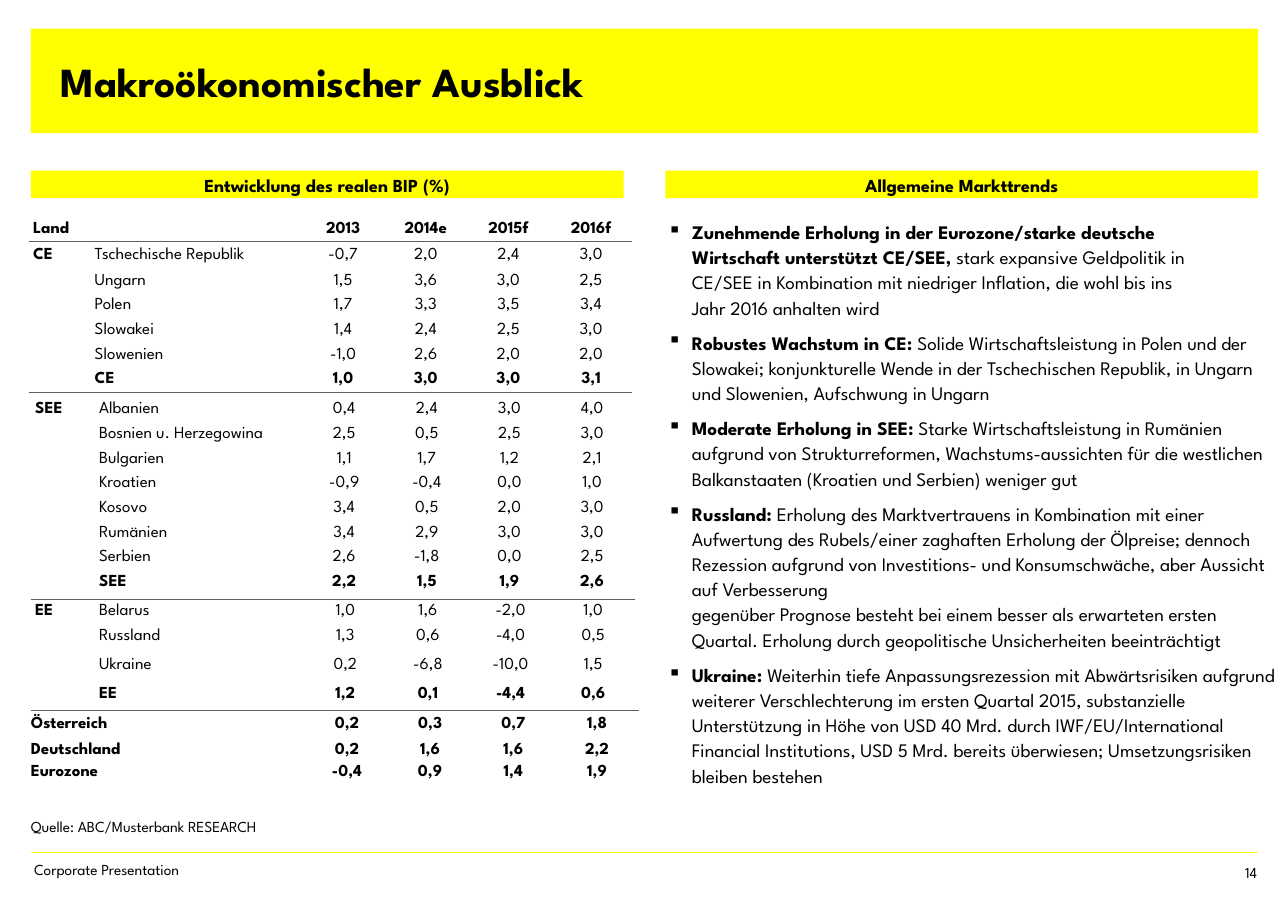
import lxml.etree
import pptx
import pptx.dml.color
import pptx.enum.shapes
import pptx.enum.text
import pptx.oxml.ns
import pptx.util

Inches, Pt = pptx.util.Inches, pptx.util.Pt
ALIGN, ANCHOR = pptx.enum.text.PP_ALIGN, pptx.enum.text.MSO_ANCHOR
qn = pptx.oxml.ns.qn

COLORS = {"yellow": "FFFF00", "black": "000000", "rule": "5F5F5F"}
FONT = "League Spartan"
PLAIN_TABLE_STYLE = "{2D5ABB26-0587-4C30-8999-92F81FD0307C}"
LEFT, CONTENT_WIDTH = 0.28, 11.14
VALUE_WIDTHS = [0.75] * 4

CE_ROWS = [
    ["Land", "", "", "2013", "2014e", "2015f", "2016f"],
    ["CE", "Tschechische Republik", "", "-0,7", "2,0", "2,4", "3,0"],
    ["", "Ungarn", "", "1,5", "3,6", "3,0", "2,5"],
    ["", "Polen", "", "1,7", "3,3", "3,5", "3,4"],
    ["", "Slowakei", "", "1,4", "2,4", "2,5", "3,0"],
    ["", "Slowenien", "", "-1,0", "2,6", "2,0", "2,0"],
    ["", "CE", "", "1,0", "3,0", "3,0", "3,1"],
]
SEE_ROWS = [
    ["SEE", "Albanien", "", "0,4", "2,4", "3,0", "4,0"],
    ["", "Bosnien u. Herzegowina", "", "2,5", "0,5", "2,5", "3,0"],
    ["", "Bulgarien", "", "1,1", "1,7", "1,2", "2,1"],
    ["", "Kroatien", "", "-0,9", "-0,4", "0,0", "1,0"],
    ["", "Kosovo", "", "3,4", "0,5", "2,0", "3,0"],
    ["", "Rumänien", "", "3,4", "2,9", "3,0", "3,0"],
    ["", "Serbien", "", "2,6", "-1,8", "0,0", "2,5"],
    ["", "SEE", "", "2,2", "1,5", "1,9", "2,6"],
]
EE_ROWS = [
    ["EE", "Belarus", "", "1,0", "1,6", "-2,0", "1,0"],
    ["", "Russland", "", "1,3", "0,6", "-4,0", "0,5"],
    ["", "Ukraine", "", "0,2", "-6,8", "-10,0", "1,5"],
    ["", "EE", "", "1,2", "0,1", "-4,4", "0,6"],
]
EURO_ROWS = [
    ["Österreich", "", "0,2", "0,3", "0,7", "1,8"],
    ["Deutschland", "", "0,2", "1,6", "1,6", "2,2"],
    ["Eurozone", "", "-0,4", "0,9", "1,4", "1,9"],
]
TRENDS = [
    ("Zunehmende Erholung in der Eurozone/starke deutsche\nWirtschaft unterstützt CE/SEE, ",
     "stark expansive Geldpolitik in\nCE/SEE in Kombination mit niedriger Inflation, "
     "die wohl bis ins\nJahr 2016 anhalten wird"),
    ("Robustes Wachstum in CE: ",
     "Solide Wirtschaftsleistung in Polen und der Slowakei; konjunkturelle Wende in der "
     "Tschechischen Republik, in Ungarn und Slowenien, Aufschwung in Ungarn"),
    ("Moderate Erholung in SEE:",
     " Starke Wirtschaftsleistung in Rumänien aufgrund von Strukturreformen, "
     "Wachstums-aussichten für die westlichen Balkanstaaten (Kroatien und Serbien) weniger gut"),
    ("Russland: ",
     "Erholung des Marktvertrauens in Kombination mit einer Aufwertung des Rubels/einer "
     "zaghaften Erholung der Ölpreise; dennoch Rezession aufgrund von Investitions- und "
     "Konsumschwäche, aber Aussicht auf Verbesserung\ngegenüber Prognose besteht bei einem "
     "besser als erwarteten ersten Quartal. Erholung durch geopolitische Unsicherheiten "
     "beeinträchtigt"),
    ("Ukraine: ",
     "Weiterhin tiefe Anpassungsrezession mit Abwärtsrisiken aufgrund weiterer "
     "Verschlechterung im ersten Quartal 2015, substanzielle Unterstützung in Höhe von "
     "USD 40 Mrd. durch IWF/EU/International Financial Institutions, USD 5 Mrd. bereits "
     "überwiesen; Umsetzungsrisiken bleiben bestehen"),
]


def rgb(name):
    return pptx.dml.color.RGBColor.from_string(COLORS[name])


def write(paragraph, text, size=10, bold=False, align=None):
    """Append text to the paragraph; a newline becomes a line break."""
    if align is not None:
        paragraph.alignment = align
    for index, line in enumerate(text.split("\n")):
        if index:
            paragraph.add_line_break()
            line_break = paragraph._p.findall(qn("a:br"))[-1]
            lxml.etree.SubElement(line_break, qn("a:rPr"), sz=str(int(size * 100)))
        run = paragraph.add_run()
        run.text = line
        run.font.name, run.font.size, run.font.bold = FONT, Pt(size), bold
        run.font.color.rgb = rgb("black")


def set_margins(target, left=0, top=0, right=0, bottom=0):
    target.margin_left, target.margin_top = Inches(left), Inches(top)
    target.margin_right, target.margin_bottom = Inches(right), Inches(bottom)


def add_text_box(slide, left, top, width, height, margins=(), anchor=ANCHOR.TOP):
    box = slide.shapes.add_textbox(Inches(left), Inches(top), Inches(width), Inches(height))
    frame = box.text_frame
    frame.word_wrap, frame.vertical_anchor = True, anchor
    set_margins(frame, *margins)
    return frame


def add_bar(slide, left, top, width, height):
    bar = slide.shapes.add_shape(pptx.enum.shapes.MSO_SHAPE.RECTANGLE, Inches(left),
                                 Inches(top), Inches(width), Inches(height))
    bar.shadow.inherit = False
    bar.fill.solid()
    bar.fill.fore_color.rgb = rgb("yellow")
    bar.line.fill.background()
    return bar


def add_heading(slide, left, text):
    frame = add_bar(slide, left, 1.55, 5.38, 0.25).text_frame
    set_margins(frame)
    frame.vertical_anchor = ANCHOR.MIDDLE
    frame.paragraphs[0].line_spacing = Pt(15)
    write(frame.paragraphs[0], text, size=12, bold=True, align=ALIGN.CENTER)


def add_footer_line(slide):
    line = slide.shapes.add_connector(
        pptx.enum.shapes.MSO_CONNECTOR.STRAIGHT, Inches(LEFT), Inches(7.74),
        Inches(LEFT + CONTENT_WIDTH), Inches(7.74))
    line.line.color.rgb, line.line.width = rgb("yellow"), Pt(1)
    lxml.etree.SubElement(line._element.spPr, qn("a:effectLst"))


def add_cell_rule(cell, side, points):
    rule = lxml.etree.Element(qn("a:ln" + side), w=str(Pt(points)))
    fill = lxml.etree.SubElement(rule, qn("a:solidFill"))
    lxml.etree.SubElement(fill, qn("a:srgbClr"), val=COLORS["rule"])
    cell._tc.get_or_add_tcPr().insert(0, rule)


def add_gdp_table(slide, left, top, height, rows, widths, weights, bold_rows, rules, merges=()):
    """rules maps a row to the side (T or B) and width of its rule; weights share the height."""
    table = slide.shapes.add_table(len(rows), len(widths), Inches(left), Inches(top),
                                   Inches(sum(widths)), Inches(height)).table
    table.first_row = table.horz_banding = False
    table._tbl.tblPr.find(qn("a:tableStyleId")).text = PLAIN_TABLE_STYLE
    for column, width in zip(table.columns, widths):
        column.width = Inches(width)
    first_value = len(widths) - len(VALUE_WIDTHS)
    for r, values in enumerate(rows):
        table.rows[r].height = Inches(height * weights[r] / sum(weights))
        for c, value in enumerate(values):
            cell = table.cell(r, c)
            cell.fill.background()
            cell.vertical_anchor = ANCHOR.MIDDLE
            set_margins(cell, left=0.04 if c == 0 and first_value == 3 else 0)
            paragraph = cell.text_frame.paragraphs[0]
            if value:
                write(paragraph, value, size=11, bold=c == 0 or r in bold_rows,
                      align=ALIGN.CENTER if c >= first_value else ALIGN.LEFT)
            else:
                lxml.etree.SubElement(paragraph._p, qn("a:endParaRPr"), sz="1100")
            if r in rules:
                add_cell_rule(cell, *rules[r])
    for r, c in merges:
        table.cell(r, c).merge(table.cell(r, c + 1))


def add_trends(slide):
    frame = add_text_box(slide, 5.91, 1.87, 5.69, 5.74, margins=(0.11, 0.11))
    for index, (lead, body) in enumerate(TRENDS):
        paragraph = frame.add_paragraph() if index else frame.paragraphs[0]
        properties = paragraph._p.get_or_add_pPr()
        properties.set("marL", str(Inches(0.26)))
        properties.set("indent", str(Inches(-0.22)))
        color = lxml.etree.SubElement(properties, qn("a:buClr"))
        lxml.etree.SubElement(color, qn("a:srgbClr"), val=COLORS["black"])
        lxml.etree.SubElement(properties, qn("a:buChar"), char="▪")
        paragraph.line_spacing, paragraph.space_after = 1.1, Pt(6.5)
        write(paragraph, lead, size=12.5, bold=True)
        write(paragraph, body, size=12.5)


def main():
    presentation = pptx.Presentation()
    presentation.slide_width, presentation.slide_height = Inches(11.69), Inches(8.27)
    slide = presentation.slides.add_slide(presentation.slide_layouts[6])

    add_bar(slide, LEFT, 0.26, CONTENT_WIDTH, 0.95)
    title = add_text_box(slide, 0.55, 0.26, 7.86, 0.95, anchor=ANCHOR.MIDDLE)
    write(title.paragraphs[0], "Makroökonomischer Ausblick", size=27, bold=True)
    add_heading(slide, LEFT, "Entwicklung des realen BIP (%)")
    add_heading(slide, 6.04, "Allgemeine Markttrends")

    add_gdp_table(slide, 0.26, 1.97, 1.59, CE_ROWS, [0.6, 1.13, 0.75] + VALUE_WIDTHS,
                  [0.22, 0.24] + [0.22] * 5, (0, 6), {0: ("B", 1), 6: ("B", 0.5)},
                  merges=[(0, 0), (1, 1)])
    add_gdp_table(slide, LEFT, 3.6, 1.8, SEE_ROWS, [0.62, 1.76, 0.09] + VALUE_WIDTHS,
                  [0.23] + [0.22] * 7, (7,), {})
    add_gdp_table(slide, LEFT, 5.44, 0.98, EE_ROWS, [0.62, 1.11, 0.75] + VALUE_WIDTHS,
                  [0.23, 0.23, 0.31, 0.23], (3,), {0: ("T", 0.5)})
    add_gdp_table(slide, LEFT, 6.45, 0.66, EURO_ROWS, [1.73, 0.76, 0.76, 0.75, 0.76, 0.76],
                  [0.26, 0.2, 0.2], (0, 1, 2), {0: ("T", 0.5)})
    add_trends(slide)

    source = add_text_box(slide, LEFT, 7.38, 4.57, 0.25, (0, 0.04, 0.08, 0.04), ANCHOR.BOTTOM)
    write(source.paragraphs[0], "Quelle: ABC/Musterbank RESEARCH")
    add_footer_line(slide)
    footer = add_text_box(slide, 0.2, 7.76, 4.73, 0.5, (0.11, 0.05, 0.11, 0.05))
    write(footer.paragraphs[0], "Corporate Presentation")
    page_number = add_text_box(slide, 8, 7.84, 3.41, 0.43)
    write(page_number.paragraphs[0], "14", align=ALIGN.RIGHT)
    presentation.save("out.pptx")


if __name__ == "__main__":
    main()
